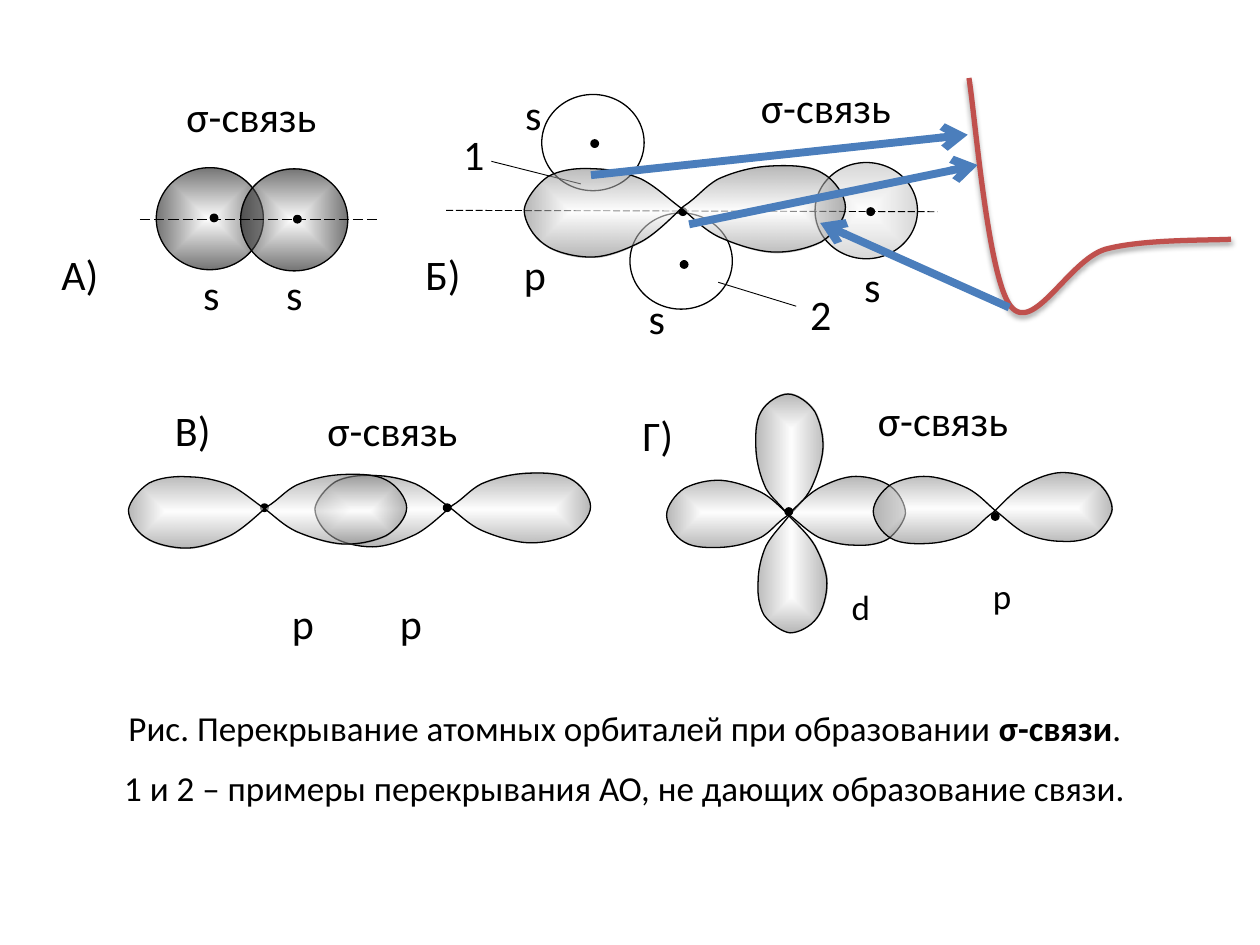
from lxml.etree import SubElement
from pptx import Presentation
from pptx.dml.color import RGBColor
from pptx.enum.dml import MSO_LINE
from pptx.enum.shapes import MSO_CONNECTOR, MSO_SHAPE
from pptx.enum.text import PP_ALIGN
from pptx.oxml import parse_xml
from pptx.oxml.ns import nsdecls, qn
from pptx.util import Pt

COLORS = {"ink": "000000", "white": "FFFFFF", "lobe": "7A7A7A", "pale": "B6B6B6",
          "curve": "C0504D", "arrow": "4B7EBC"}
BOND = "σ-связь"
LOBES = [(127, 32),
         (138, 25), (143, 17), (154, 11), (165, 6), (179, 2), (193, 1),
         (207, 0), (226, 0), (236, 6), (246, 11), (255, 24), (255, 33),
         (255, 42), (246, 54), (236, 60), (226, 65), (210, 69), (196, 68),
         (182, 67), (165, 61), (154, 56), (142, 50), (135, 42), (125, 34),
         (115, 27), (105, 17), (93, 11), (81, 6), (67, 3), (55, 3),
         (42, 2), (28, 4), (19, 9), (10, 15), (1, 27), (0, 35),
         (0, 44), (7, 56), (16, 62), (24, 68), (40, 72), (53, 72),
         (66, 72), (81, 66), (93, 60), (106, 53), (120, 38), (127, 32)]
ENERGY = [(0, 0), (5, 31), (15, 158), (33, 181), (51, 204), (79, 145), (108, 136),
          (137, 128), (187, 129), (208, 128)]


def rgb(name):
    """Return the named colour."""
    return RGBColor.from_string(COLORS[name])


def set_line(shape, color="ink", width=0.75):
    """Give a shape or connector a plain line."""
    shape.line.color.rgb = rgb(color)
    shape.line.width = Pt(width)


def fill_gradient(shape, edge, kind):
    """Fill from a translucent white centre to a translucent edge colour."""
    shape.fill.solid()
    stops = "".join(
        f'<a:gs pos="{place}"><a:srgbClr val="{COLORS[name]}"><a:alpha val="54000"/></a:srgbClr></a:gs>'
        for place, name in ((0, "white"), (100000, edge)))
    gradient = parse_xml(
        f'<a:gradFill {nsdecls("a")} rotWithShape="1"><a:gsLst>{stops}</a:gsLst><a:path path="{kind}">'
        '<a:fillToRect l="50000" t="50000" r="50000" b="50000"/></a:path></a:gradFill>')
    properties = shape._element.spPr
    properties.replace(properties.find(qn("a:solidFill")), gradient)


def add_circle(page, left, top, width, height, edge=None):
    """Add an s orbital, hollow when it has no edge colour."""
    circle = page.shapes.add_shape(MSO_SHAPE.OVAL, Pt(left), Pt(top), Pt(width), Pt(height))
    circle.shadow.inherit = False
    set_line(circle)
    if edge:
        fill_gradient(circle, edge, "shape")
    else:
        circle.fill.background()
    return circle


def add_nuclei(page, x, y, places):
    """Add the dots that mark atomic nuclei."""
    for left, top in places:
        dot = add_circle(page, x + left, y + top, 4.3, 4.3)
        dot.fill.solid()
        dot.fill.fore_color.rgb = rgb("ink")


def add_curve(page, left, top, points, close):
    """Add a freeform whose points are chained cubic curves."""
    builder = page.shapes.build_freeform(*points[0], scale=Pt(0.72))
    builder.add_line_segments(points[1:], close=close)
    shape = builder.convert_to_shape(Pt(left), Pt(top))
    shape.shadow.inherit = False
    segments = shape._element.xpath(".//a:lnTo")
    for start in range(0, len(segments), 3):
        bend = parse_xml(f'<a:cubicBezTo {nsdecls("a")}/>')
        segments[start].addprevious(bend)
        for segment in segments[start:start + 3]:
            bend.append(segment[0])
            segment.getparent().remove(segment)
    return shape


def add_lobes(page, left, top, width, height, rotation=0):
    """Add a two-lobed orbital in the given box."""
    lobes = add_curve(page, left, top, LOBES, True)
    lobes.left, lobes.top, lobes.width, lobes.height = Pt(left), Pt(top), Pt(width), Pt(height)
    lobes.rotation = rotation
    fill_gradient(lobes, "lobe", "rect")
    set_line(lobes)


def add_line(page, x, y, start, end, color="ink", width=0.5, dashed=False, arrow=False):
    """Add a straight line between two places in a region."""
    line = page.shapes.add_connector(MSO_CONNECTOR.STRAIGHT, Pt(x + start[0]), Pt(y + start[1]),
                                     Pt(x + end[0]), Pt(y + end[1]))
    set_line(line, color, width)
    if dashed:
        line.line.dash_style = MSO_LINE.LONG_DASH
    if arrow:
        SubElement(line.line._get_or_add_ln(), qn("a:tailEnd"), type="arrow")
    SubElement(line._element.spPr, qn("a:effectLst"))


def add_text(page, left, top, width, height, paragraphs, size=24, align=PP_ALIGN.LEFT):
    """Add a text box from paragraphs of (text, bold) runs."""
    box = page.shapes.add_textbox(Pt(left), Pt(top), Pt(width), Pt(height))
    frame = box.text_frame
    frame.word_wrap = True
    for index, runs in enumerate(paragraphs):
        para = frame.add_paragraph() if index else frame.paragraphs[0]
        para.alignment = align
        para.space_after = Pt(10)
        for text, bold in runs:
            span = para.add_run()
            span.text = text
            span.font.name = "Calibri"
            span.font.size = Pt(size)
            span.font.bold = bold
            span.font.color.rgb = rgb("ink")


def add_labels(page, x, y, labels, size=24):
    """Add short labels at places in a region."""
    for text, left, top in labels:
        width = 101 if text == BOND else 38
        add_text(page, x + left, y + top, width, 37, [[(text, False)]], size)


def draw_s_s(page, x, y):
    """Draw the overlap of two s orbitals."""
    for left, top in ((61.3, 47.8), (109.5, 48.5)):
        add_circle(page, x + left, y + top, 61.2, 58.3, "ink")
    add_line(page, x, y, (52, 77.3), (188.7, 77.3), width=0.75, dashed=True)
    add_nuclei(page, x, y, [(92.2, 74.4), (139.8, 75.1)])
    add_labels(page, x, y, [(BOND, 71.4, 0.2), ("А)", 0, 90.2), ("s", 81, 101.8), ("s", 128.4, 101.8)])


def draw_p_s(page, x, y):
    """Draw a p orbital with one bonding and two non-bonding s orbitals."""
    for left, top, edge in ((73.6, 11, None), (124, 78.7, None), (229.8, 49.9, "pale")):
        add_circle(page, x + left, y + top, 58.5, 55, edge)
    add_line(page, x, y, (18.9, 77.2), (299.7, 78), dashed=True)
    add_nuclei(page, x, y, [(152.1, 75.8), (101.7, 36.9), (152.8, 106), (259.4, 75.8)])
    add_labels(page, x, y, [(BOND, 191.7, 0.2), ("s", 127.6, 120.4), ("s", 250.7, 102.4),
                            ("s", 57, 3.8), ("p", 56.3, 95.2), ("1", 21.5, 26.8),
                            ("2", 219.8, 118.3), ("Б)", 0, 95.2)])
    add_line(page, x, y, (44.8, 49.2), (95.9, 62.1))
    add_line(page, x, y, (174.4, 118.3), (219, 132))
    add_lobes(page, x + 63.5, y + 51.3, 183.6, 52.6)


def draw_p_p(page, x, y):
    """Draw the overlap of two p orbitals."""
    add_lobes(page, x + 107, y + 43, 157.5, 42.5)
    add_nuclei(page, x, y, [(76, 61), (180.4, 61)])
    add_labels(page, x, y, [("В)", 19.9, 0.5), (BOND, 107, 0.5), ("р", 86.7, 110.7), ("р", 148.4, 110.7)])
    add_lobes(page, x + 0.4, y + 43.7, 159, 42.5)


def draw_d_p(page, x, y):
    """Draw the overlap of a d orbital and a p orbital."""
    for left, top, rotation in ((23.8, 50.9, 270), (20.9, 50.2, 180), (139, 48, 180)):
        add_lobes(page, x + left, y + top, 136.5, 41, rotation)
    add_labels(page, x, y, [("Г)", 0, 8.4), (BOND, 134.6, 0)])
    add_labels(page, x, y, [("d", 119.5, 109.2), ("p", 200.2, 102.7)], 20)
    add_nuclei(page, x, y, [(88.6, 68.2), (206.6, 71)])


def draw_energy(page, x, y):
    """Draw the energy curve and the arrows that tie it to the overlaps."""
    curve = add_curve(page, x + 216.7, y + 0.6, ENERGY, False)
    curve.fill.background()
    set_line(curve, "curve", 3)
    effects = curve._element.spPr.find(qn("a:effectLst"))
    shadow = SubElement(effects, qn("a:outerShdw"), blurRad=str(Pt(3.1)), dist=str(Pt(1.8)),
                        dir="5400000", rotWithShape="0")
    SubElement(SubElement(shadow, qn("a:srgbClr"), val=COLORS["ink"]), qn("a:alpha"), val="35000")
    for start, end in (((239.7, 131.7), (131.7, 83.4)), ((0.7, 56.1), (216, 33)),
                       ((56.8, 84.2), (221.7, 50.3))):
        add_line(page, x, y, start, end, "arrow", 4.5, arrow=True)


def main():
    """Build the slide and save it."""
    deck = Presentation()
    deck.slide_width, deck.slide_height = Pt(720), Pt(540)
    page = deck.slides.add_slide(deck.slide_layouts[6])
    draw_s_s(page, 28, 48)
    draw_p_s(page, 236, 43)
    add_text(page, 22.3, 400.3, 669.6, 61.2,
             [[("Рис. Перекрывание атомных орбиталей при образовании ", False),
               ("σ-связи", True), (".", False)],
              [("1 и 2 – примеры перекрывания АО, не дающих образование связи.", False)]],
             20, PP_ALIGN.CENTER)
    draw_p_p(page, 73, 227)
    draw_d_p(page, 360, 222)
    draw_energy(page, 337, 44)
    deck.save("out.pptx")


if __name__ == "__main__":
    main()
